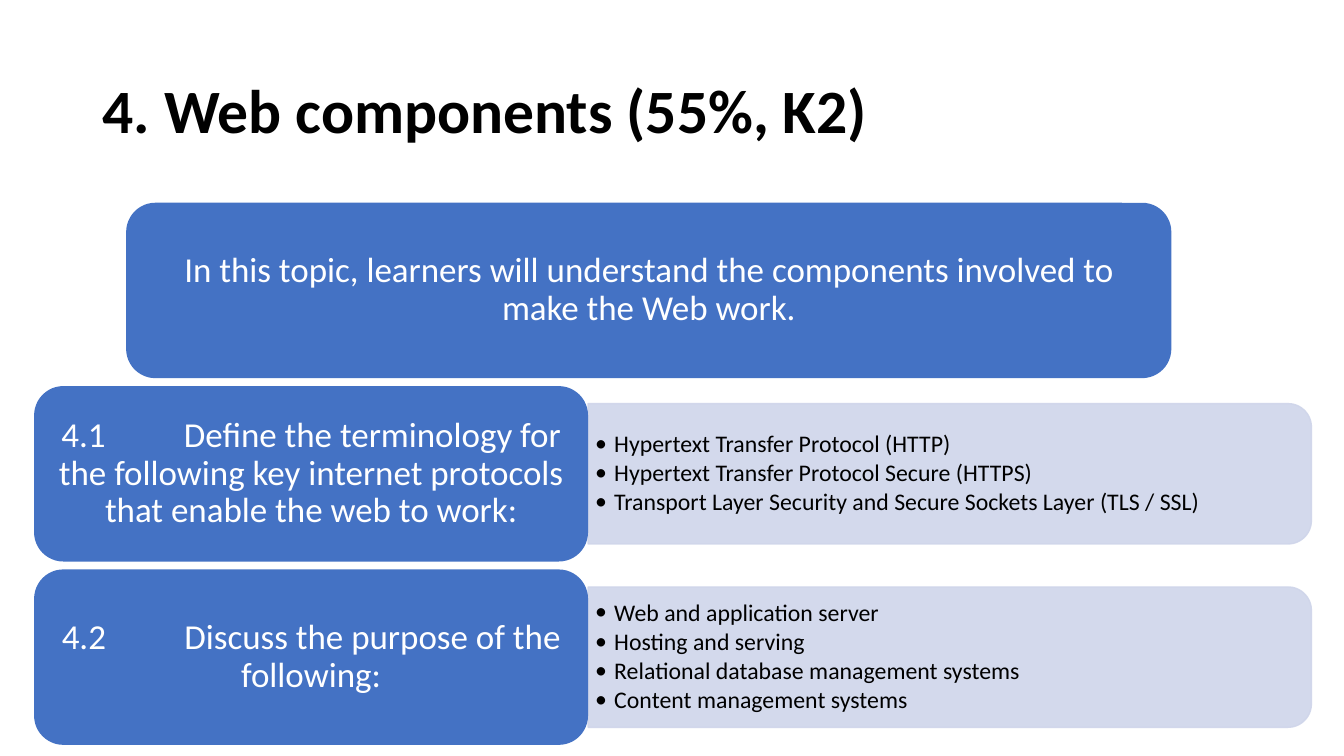
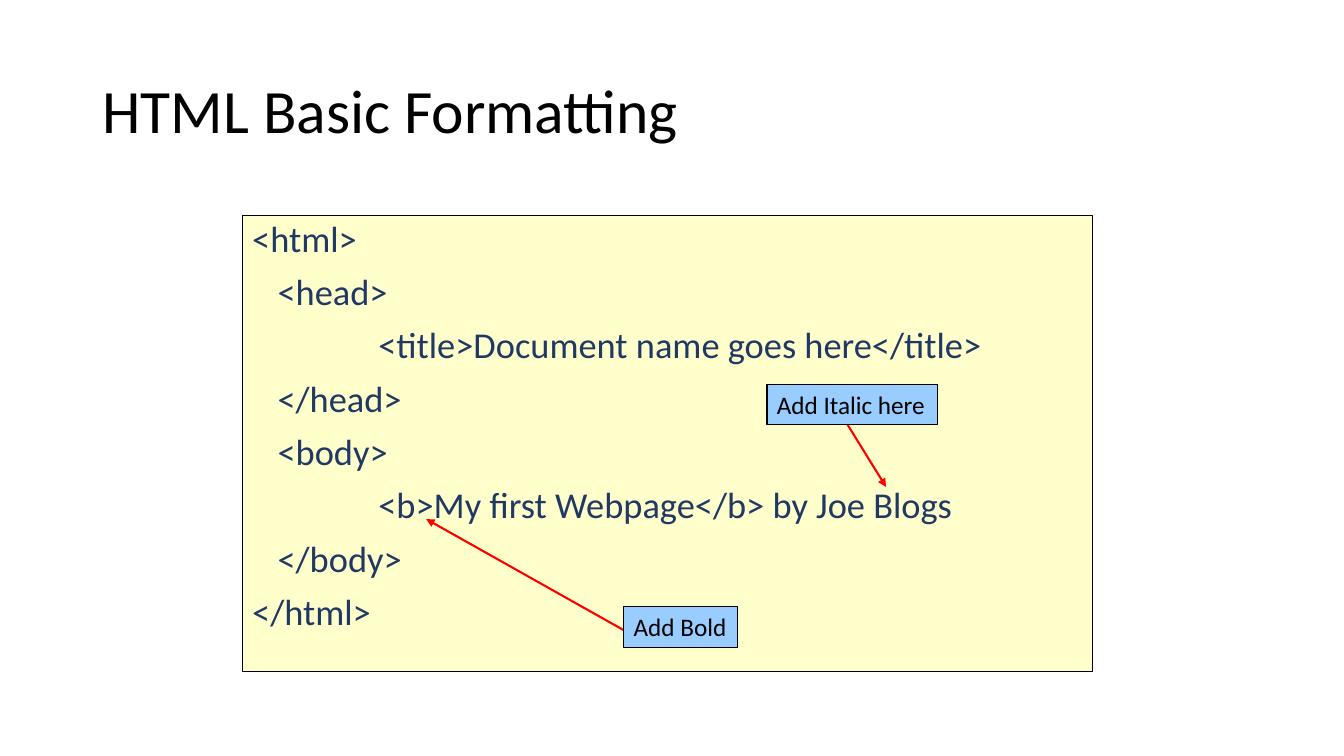
from math import cos, radians, sin

from lxml.etree import SubElement
from pptx import Presentation
from pptx.dml.color import RGBColor
from pptx.enum.shapes import MSO_CONNECTOR, MSO_SHAPE
from pptx.enum.text import MSO_ANCHOR, MSO_AUTO_SIZE, PP_ALIGN
from pptx.oxml.ns import qn
from pptx.util import Cm, Pt

FONT = "Calibri"
BLACK, WHITE, RED = "000000", "FFFFFF", "FF0000"
BLUE, PALE_BLUE = "4472C4", "CFD5EA"
CREAM, NAVY, SKY = "FFFFCC", "203864", "99CCFF"

TITLE_BOX = (2.33, 1.02, 29.21, 3.68)
INTRO_BOX = (3.18, 5.11, 26.34, 4.42)
ROW_PITCH = 4.62
ROW_LEFT, ROW_WIDTH, TOPIC_WIDTH = 0.86, 32.19, 13.96
CODE_BOX = (6.1, 5.44, 21.44, 11.48)
CODE_INDENTS = (0, 0.64, 3.18)

INTRO = "In this topic, learners will understand the components involved to make the Web work."
TOPICS = [
    ("4.1\tDefine the terminology for the following key internet protocols "
     "that enable the web to work:",
     ["Hypertext Transfer Protocol (HTTP)",
      "Hypertext Transfer Protocol Secure (HTTPS)",
      "Transport Layer Security and Secure Sockets Layer (TLS / SSL)"]),
    ("4.2\tDiscuss the purpose of the following:",
     ["Web and application server",
      "Hosting and serving",
      "Relational database management systems",
      "Content management systems"]),
]
CODE = [
    (0, "<html>"),
    (1, "<head>"),
    (2, "<title>Document name goes here</title>"),
    (1, "</head>"),
    (1, "<body>"),
    (2, "<b>My first Webpage</b> by Joe Blogs"),
    (1, "</body>"),
    (0, "</html>"),
]
HINTS = [
    ("Add Bold", (15.72, 15.29, 2.87, 1.02), (15.72, 15.88), (10.74, 13.08)),
    ("Add Italic here", (19.33, 9.68, 4.29, 1.02), (21.34, 10.67), (22.33, 12.27)),
]


def rgb(hex_colour):
    """Turn a hex string into a colour."""
    return RGBColor.from_string(hex_colour)


def paint(shape, fill, line=None, width=0.75):
    """Give a shape a flat fill, an optional outline and no shadow."""
    shape.shadow.inherit = False
    shape.fill.solid()
    shape.fill.fore_color.rgb = rgb(fill)
    if line:
        shape.line.color.rgb = rgb(line)
        shape.line.width = Pt(width)
    else:
        shape.line.fill.background()


def style(paragraph, size, colour, bold=False, align=PP_ALIGN.LEFT, spacing=0.9, before=0, after=0):
    """Set the font, alignment and spacing of a paragraph."""
    paragraph.alignment = align
    paragraph.line_spacing = spacing
    paragraph.space_before = Pt(before)
    paragraph.space_after = Pt(after)
    font = paragraph.font
    font.name, font.size, font.bold = FONT, Pt(size), bold
    font.color.rgb = rgb(colour)


def set_indent(paragraph, margin, hanging=0, bullet=None):
    """Set the left margin, hanging indent and bullet of a paragraph."""
    properties = paragraph._p.get_or_add_pPr()
    properties.set("marL", str(Cm(margin)))
    properties.set("indent", str(-Cm(hanging)))
    if bullet:
        SubElement(properties, qn("a:buFont"), typeface=FONT)
        SubElement(properties, qn("a:buChar"), char=bullet)
    else:
        SubElement(properties, qn("a:buNone"))


def set_margins(frame, left, top, right, bottom):
    """Set the four inner margins of a text frame."""
    frame.margin_left, frame.margin_top = Cm(left), Cm(top)
    frame.margin_right, frame.margin_bottom = Cm(right), Cm(bottom)


def place(shape, box):
    """Move and size a placeholder to a box."""
    shape.left, shape.top, shape.width, shape.height = map(Cm, box)


def fill_lines(frame, lines):
    """Write one paragraph per line and return the paragraphs."""
    frame.text = "\n".join(lines)
    return frame.paragraphs


def add_titled_slide(deck, layout, title, bold=False):
    """Add a slide with its title in the shared style."""
    slide = deck.slides.add_slide(deck.slide_layouts[layout])
    heading = slide.shapes.title
    place(heading, TITLE_BOX)
    heading.text_frame.text = title
    heading.text_frame.auto_size = MSO_AUTO_SIZE.NONE
    heading.text_frame.vertical_anchor = MSO_ANCHOR.MIDDLE
    style(heading.text_frame.paragraphs[0], 44, BLACK, bold)
    return slide


def add_topic_block(slide, box, wording):
    """Add a rounded blue block with centred wording."""
    block = slide.shapes.add_shape(MSO_SHAPE.ROUNDED_RECTANGLE, *map(Cm, box))
    paint(block, BLUE)
    frame = block.text_frame
    frame.word_wrap = True
    frame.vertical_anchor = MSO_ANCHOR.MIDDLE
    set_margins(frame, 0.27, 0.14, 0.27, 0.14)
    frame.text = wording
    paragraph = frame.paragraphs[0]
    style(paragraph, 25, WHITE, align=PP_ALIGN.CENTER)
    paragraph._p.get_or_add_pPr().set("defTabSz", str(Cm(3.09)))


def add_detail_panel(slide, box, details):
    """Add a pale panel, rounded on its right side, with a bulleted list."""
    left, top, width, height = box
    radius = height / 6
    right, bottom = left + width, top + height
    corners = [(top + radius, range(-90, 1, 6)), (bottom - radius, range(0, 91, 6))]
    outline = [(right - radius + radius * cos(radians(angle)), centre + radius * sin(radians(angle)))
               for centre, sweep in corners for angle in sweep]
    builder = slide.shapes.build_freeform(Cm(left), Cm(top))
    builder.add_line_segments([(Cm(x), Cm(y)) for x, y in outline + [(left, bottom)]])
    panel = builder.convert_to_shape()
    paint(panel, PALE_BLUE, PALE_BLUE, 1)
    for colour in panel._element.spPr.iter(qn("a:srgbClr")):
        SubElement(colour, qn("a:alpha"), val="90000")
    frame = panel.text_frame
    frame.word_wrap = True
    frame.vertical_anchor = MSO_ANCHOR.MIDDLE
    set_margins(frame, 0.18, 0.25, 0.36, 0.25)
    for paragraph in fill_lines(frame, details):
        set_indent(paragraph, 0.48, 0.48, "•")
        style(paragraph, 17, BLACK, after=2.5)


def add_topic_row(slide, box, topic, details):
    """Add a topic block with its detail panel on the right."""
    left, top, width, height = box
    panel_height = height * 0.8
    add_detail_panel(slide, (left + TOPIC_WIDTH, top + (height - panel_height) / 2,
                             width - TOPIC_WIDTH, panel_height), details)
    add_topic_block(slide, (left, top, TOPIC_WIDTH, height), topic)


def add_code_listing(slide, box):
    """Show the HTML source in the body placeholder."""
    listing = slide.placeholders[1]
    place(listing, box)
    listing.fill.solid()
    listing.fill.fore_color.rgb = rgb(CREAM)
    listing.line.color.rgb = rgb(BLACK)
    listing.line.width = Pt(0.75)
    frame = listing.text_frame
    frame.auto_size = MSO_AUTO_SIZE.NONE
    paragraphs = fill_lines(frame, [line for _, line in CODE])
    for paragraph, (depth, _) in zip(paragraphs, CODE):
        set_indent(paragraph, CODE_INDENTS[depth])
        style(paragraph, 26, NAVY, before=10)


def add_hint(slide, wording, box, start, tip):
    """Add a hint label with a red arrow to the code it explains."""
    arrow = slide.shapes.add_connector(MSO_CONNECTOR.STRAIGHT, *map(Cm, start + tip))
    arrow.line.color.rgb = rgb(RED)
    arrow.line.width = Pt(1.5)
    properties = arrow._element.spPr
    SubElement(properties.find(qn("a:ln")), qn("a:tailEnd"), type="triangle")
    SubElement(properties, qn("a:effectLst"))
    label = slide.shapes.add_shape(MSO_SHAPE.RECTANGLE, *map(Cm, box))
    paint(label, SKY, BLACK)
    frame = label.text_frame
    frame.word_wrap = False
    frame.auto_size = MSO_AUTO_SIZE.SHAPE_TO_FIT_TEXT
    frame.vertical_anchor = MSO_ANCHOR.TOP
    frame.text = wording
    style(frame.paragraphs[0], 18, BLACK, spacing=1.0)


def build_components_slide(deck):
    """Build the overview of the web components topic."""
    slide = add_titled_slide(deck, 5, "4. Web components (55%, K2)", bold=True)
    add_topic_block(slide, INTRO_BOX, INTRO)
    _, intro_top, _, row_height = INTRO_BOX
    for number, (topic, details) in enumerate(TOPICS, 1):
        row_box = (ROW_LEFT, intro_top + number * ROW_PITCH, ROW_WIDTH, row_height)
        add_topic_row(slide, row_box, topic, details)


def build_formatting_slide(deck):
    """Build the HTML formatting example."""
    slide = add_titled_slide(deck, 1, "HTML Basic Formatting")
    add_code_listing(slide, CODE_BOX)
    for hint in HINTS:
        add_hint(slide, *hint)


def main():
    """Build and save the presentation."""
    deck = Presentation()
    deck.slide_width, deck.slide_height = Cm(33.87), Cm(19.05)
    build_components_slide(deck)
    build_formatting_slide(deck)
    deck.save("out.pptx")


if __name__ == "__main__":
    main()
